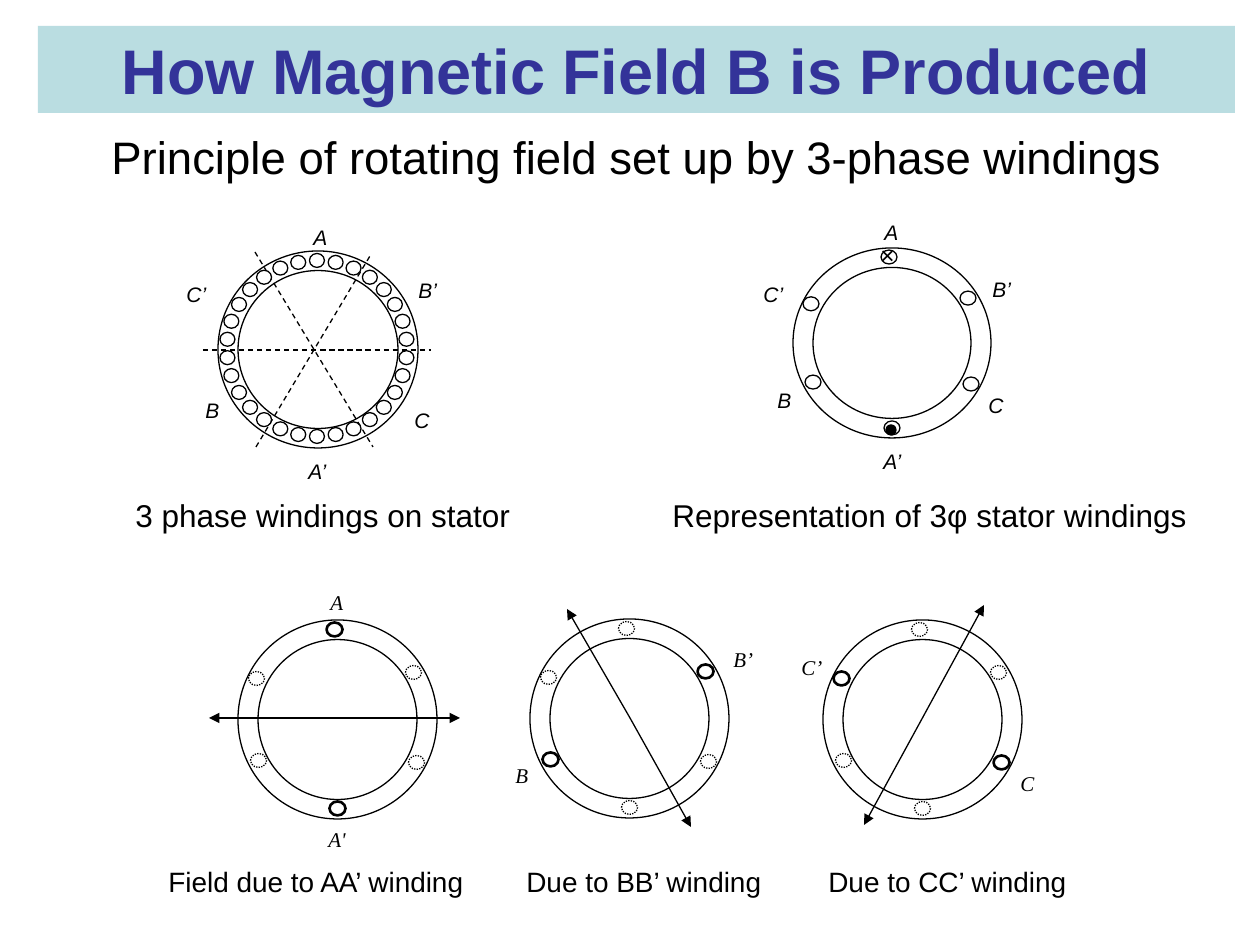
from math import cos, radians, sin

from lxml import etree
from pptx import Presentation
from pptx.dml.color import RGBColor
from pptx.enum.dml import MSO_LINE
from pptx.enum.shapes import MSO_CONNECTOR, MSO_SHAPE
from pptx.enum.text import MSO_ANCHOR, MSO_AUTO_SIZE, PP_ALIGN
from pptx.oxml.ns import qn
from pptx.util import Pt

SCALE = 9144000 / 1260
BLACK, WHITE, NAVY, AQUA = "000000", "FFFFFF", "333399", "BADDE1"
SANS, SERIF = "Arial", "Times New Roman"
DASH, DOTTED = MSO_LINE.DASH, MSO_LINE.ROUND_DOT
OVAL, RECTANGLE = MSO_SHAPE.OVAL, MSO_SHAPE.RECTANGLE
STRAIGHT = MSO_CONNECTOR.STRAIGHT
TOP, MIDDLE = MSO_ANCHOR.TOP, MSO_ANCHOR.MIDDLE
LEFT, CENTER = PP_ALIGN.LEFT, PP_ALIGN.CENTER
GROW, FIXED = MSO_AUTO_SIZE.SHAPE_TO_FIT_TEXT, MSO_AUTO_SIZE.NONE

COIL_OFFSETS = {"A": (-3, -90), "B’": (76, -47), "C": (79, 43),
                "A’": (0, 89), "B": (-79, 41), "C’": (-81, -41)}


def px(*lengths):
    """Turn px lengths into EMU."""
    return [round(length * SCALE) for length in lengths]


def color(value):
    """Turn a hex string into a colour."""
    return RGBColor.from_string(value)


def write(shape, text, size, font=SANS, ink=BLACK, align=LEFT, **style):
    """Put one formatted paragraph into a shape."""
    frame = shape.text_frame
    frame.text = text
    frame.word_wrap = True
    paragraph = frame.paragraphs[0]
    paragraph.alignment = align
    paragraph.font.color.rgb = color(ink)
    for name, value in {"size": Pt(size), "name": font, **style}.items():
        setattr(paragraph.font, name, value)
    return frame


def solid(slide, kind, box, fill=WHITE):
    """Add a filled shape without outline or shadow."""
    shape = slide.shapes.add_shape(kind, *px(*box))
    shape.shadow.inherit = False
    shape.fill.solid()
    shape.fill.fore_color.rgb = color(fill)
    shape.line.fill.background()
    return shape


def outline(line, width=0.75, dash=None):
    """Format a black line."""
    line.color.rgb = color(BLACK)
    line.width = Pt(width)
    if dash:
        line.dash_style = dash


def oval(slide, box, fill=WHITE, **stroke):
    """Add an outlined ellipse."""
    outline(solid(slide, OVAL, box, fill).line, **stroke)


def coil(slide, x, y, width=16, **stroke):
    """Add one winding coil centred on a point."""
    oval(slide, (x - width / 2, y - 7, width, 14), **stroke)


def segment(slide, start, end, arrow=False, **stroke):
    """Add a straight line, with an arrowhead at its end if wanted."""
    connector = slide.shapes.add_connector(STRAIGHT, *px(*start, *end))
    outline(connector.line, **stroke)
    if arrow:
        tail = etree.SubElement(connector.line._get_or_add_ln(), qn("a:tailEnd"))
        tail.set("type", "triangle")
    etree.SubElement(connector._element.spPr, qn("a:effectLst"))


def caption(slide, box, text, size):
    """Add the caption of a figure."""
    write(solid(slide, RECTANGLE, box), text, size).vertical_anchor = TOP


def ring(slide, box, labels, font=SANS):
    """Add a stator ring with its phase labels."""
    x, y, width, height = box
    for text, (dx, dy) in labels.items():
        label = solid(slide, RECTANGLE, (x + dx, y + dy, 28 + 14 * len(text), 31))
        write(label, text, 12, font, italic=True).vertical_anchor = TOP
    oval(slide, box)
    oval(slide, (x + 20, y + 19.5, width - 40, height - 39))


def phase_coils(slide, box, active=None):
    """Add the six phase coils, with the active pair bold and the rest dotted."""
    x, y, width, height = box
    for phase, (dx, dy) in COIL_OFFSETS.items():
        stroke = {}
        if active:
            stroke = {"width": 1.5} if phase[0] == active else {"dash": DOTTED}
        oval_x = x + width / 2 + dx
        oval_y = y + height / 2 + dy * height / 199
        oval(slide, (oval_x - 8, oval_y - 7, 16, 14), **stroke)


def full_stator(slide, box):
    """Draw the stator with thirty coils and its three phase boundaries."""
    x, y, width, height = box
    ring(slide, box, {"A": (83, -33), "B’": (188, 20), "C": (184, 150),
                      "B": (-25, 140), "C’": (-44, 24), "A’": (78, 201)})
    for (x1, y1), (x2, y2) in (((-15, 99), (213, 99)), ((38, 196), (152, 5)),
                               ((37, 1), (155, 196))):
        segment(slide, (x + x1, y + y1), (x + x2, y + y2), dash=DASH)
    for step in range(30):
        angle = radians(12 * step)
        coil(slide, x + width / 2 - 1 + 90 * sin(angle),
             y + height / 2 - 1 - 88 * cos(angle), 15)


def simple_stator(slide, box):
    """Draw the six-coil stator with current directions at A and A’."""
    x, y, width, height = box
    ring(slide, box, {"A": (79, -35), "B’": (187, 22), "C": (183, 138),
                      "B": (-28, 133), "C’": (-42, 27), "A’": (78, 194)})
    phase_coils(slide, box)
    cross = slide.shapes.add_textbox(*px(x + 75, y - 14, 59, 42))
    write(cross, "×", 14).auto_size = GROW
    oval(slide, (x + 93, y + 177, 10, 10), BLACK)


def field_stator(slide, box, labels, active, middle, tips):
    """Draw the field direction set up by one phase winding."""
    x, y = box[:2]
    ring(slide, box, labels, SERIF)
    phase_coils(slide, box, active)
    for dx, dy in tips:
        segment(slide, (x + middle[0], y + middle[1]), (x + dx, y + dy), arrow=True)


def headings(slide, title_box, subtitle_box):
    """Place the title band and the line below it."""
    title = slide.shapes.title
    title.left, title.top, title.width, title.height = px(*title_box)
    title.fill.solid()
    title.fill.fore_color.rgb = color(AQUA)
    frame = write(title, "How Magnetic Field B is Produced", 36, ink=NAVY,
                  align=CENTER, bold=True)
    frame.vertical_anchor, frame.auto_size = MIDDLE, FIXED
    subtitle = slide.shapes.add_textbox(*px(*subtitle_box))
    frame = write(subtitle, "Principle of rotating field set up by 3-phase windings", 26)
    frame.vertical_anchor, frame.auto_size = MIDDLE, GROW
    frame.word_wrap = False


def main():
    """Build and save the slide."""
    deck = Presentation()
    deck.slide_width, deck.slide_height = px(1260, 945)
    slide = deck.slides.add_slide(deck.slide_layouts[5])
    headings(slide, (38, 26, 1197, 87), (99, 123, 1090, 67))

    caption(slide, (123, 490, 427, 49), "3 phase windings on stator", 18)
    full_stator(slide, (218, 251, 200, 197))
    caption(slide, (660, 490, 562, 72), "Representation of 3φ stator windings", 18)
    simple_stator(slide, (793, 248, 198, 190))

    caption(slide, (156, 858, 329, 52), "Field due to AA’ winding", 16)
    field_stator(slide, (238, 620, 199, 199), {"A": (80, -37), "A'": (78, 200)},
                 "A", (98, 98), ((222, 98), (-29, 98)))
    caption(slide, (514, 858, 275, 52), "Due to BB’ winding", 16)
    field_stator(slide, (530, 619, 199, 199), {"B’": (191, 21), "B": (-27, 137)},
                 "B", (100, 99), ((161, 208), (37, -10)))
    caption(slide, (816, 858, 280, 52), "Due to CC’ winding", 16)
    field_stator(slide, (823, 620, 199, 199), {"C": (185, 144), "C’": (-34, 28)},
                 "C", (100, 97), ((41, 205), (161, -15)))
    deck.save("out.pptx")


if __name__ == "__main__":
    main()
